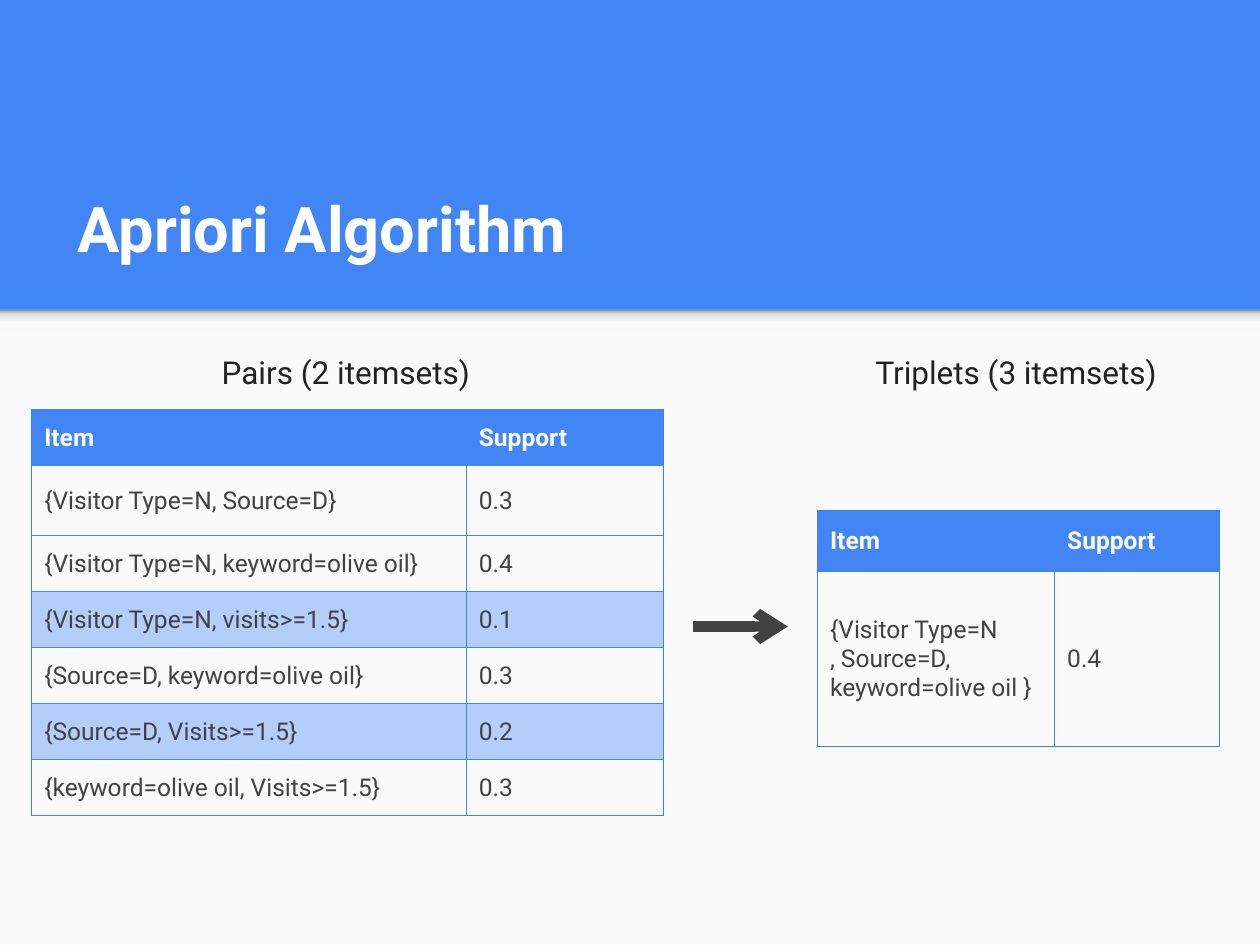
from dataclasses import dataclass

from lxml.etree import SubElement
from pptx import Presentation
from pptx.dml.color import RGBColor
from pptx.enum.shapes import MSO_CONNECTOR, MSO_SHAPE
from pptx.enum.text import MSO_ANCHOR as ANCHOR, MSO_AUTO_SIZE as AUTO_SIZE, PP_ALIGN as ALIGN
from pptx.oxml.ns import qn
from pptx.util import Cm, Pt

FONT = "Roboto"
BLUE, EDGE, PALE = "4285F4", "3C81F3", "B3CEFB"
WHITE, PAPER, GREY, BLACK = "FFFFFF", "FAFAFA", "424242", "212121"
SHADOW_STOPS = [(0, "F9F9F9"), (36, "F9F9F9"), (80, "DEDEDE"), (100, "999999")]


@dataclass
class Caption:
    text: str
    left: float
    width: float


@dataclass
class ItemTable:
    left: float
    top: float
    widths: list[float]
    heights: list[float]
    rows: list[tuple[str, str]]
    marked: tuple[int, ...] = ()


CAPTIONS = [Caption("Triplets (3 itemsets)", 17.4, 6.27),
            Caption("Pairs (2 itemsets)", 4.22, 5.54)]
TABLES = [
    ItemTable(0.64, 8.26, [8.76, 3.97], [1.13, 1.41] + [1.13] * 5, [
        ("{Visitor Type=N, Source=D}", "0.3"),
        ("{Visitor Type=N, keyword=olive oil}", "0.4"),
        ("{Visitor Type=N, visits>=1.5}", "0.1"),
        ("{Source=D, keyword=olive oil}", "0.3"),
        ("{Source=D, Visits>=1.5}", "0.2"),
        ("{keyword=olive oil, Visits>=1.5}", "0.3"),
    ], marked=(3, 5)),
    ItemTable(16.48, 10.3, [4.78, 3.33], [1.22, 3.53], [
        ("{Visitor Type=N\n, Source=D, keyword=olive oil }", "0.4"),
    ]),
]


def rgb(color: str) -> RGBColor:
    return RGBColor.from_string(color)


def write(tf, text: str, *, size: float, color: str, bold: bool = False) -> None:
    """Fill a text frame, one paragraph for each line of text."""
    for i, line in enumerate(text.split("\n")):
        p = tf.add_paragraph() if i else tf.paragraphs[0]
        p.alignment = ALIGN.LEFT
        r = p.add_run()
        r.text = line
        r.font.name, r.font.size, r.font.bold = FONT, Pt(size), bold
        r.font.color.rgb = rgb(color)


def add_band(slide, height: float):
    """Add a full-width rectangle that starts at the foot of the header."""
    sp = slide.shapes.add_shape(MSO_SHAPE.RECTANGLE, 0, Cm(6.25), Cm(25.4), Cm(height))
    sp.shadow.inherit = False
    sp.line.fill.background()
    return sp


def add_backdrop(slide) -> None:
    slide.background.fill.solid()
    slide.background.fill.fore_color.rgb = rgb(BLUE)
    panel = add_band(slide, 12.8)
    panel.fill.solid()
    panel.fill.fore_color.rgb = rgb(PAPER)

    fill = add_band(slide, 0.4).fill
    fill.gradient()
    fill.gradient_angle = 90
    stops = fill.gradient_stops
    stop_list = stops[0]._gs.getparent()
    for gs in list(stop_list):
        stop_list.remove(gs)
    for percent, color in SHADOW_STOPS:
        gs = SubElement(stop_list, qn("a:gs"), pos=str(percent * 1000))
        SubElement(gs, qn("a:srgbClr"), val=color)


def add_title(slide, text: str) -> None:
    sp = slide.shapes.title
    sp.left, sp.top, sp.width, sp.height = Cm(1.32), Cm(2.74), Cm(22.83), Cm(2.85)
    tf = sp.text_frame
    tf.auto_size = AUTO_SIZE.NONE
    tf.vertical_anchor = ANCHOR.BOTTOM
    tf.margin_left = tf.margin_right = tf.margin_top = tf.margin_bottom = Cm(0.25)
    write(tf, text, size=36, color=WHITE, bold=True)


def add_caption(slide, caption: Caption) -> None:
    sp = slide.shapes.add_textbox(Cm(caption.left), Cm(6.99), Cm(caption.width), Cm(1.03))
    sp.text_frame.word_wrap = False
    sp.text_frame.auto_size = AUTO_SIZE.SHAPE_TO_FIT_TEXT
    write(sp.text_frame, caption.text, size=18, color=BLACK)


def add_borders(cell, outer: dict[str, bool]) -> None:
    """Draw the four sides of a cell, thinner on the outside of the table."""
    for side, is_outer in outer.items():
        color, width = (EDGE, 0.75) if is_outer else (BLUE, 1)
        ln = SubElement(cell._tc.get_or_add_tcPr(), qn(f"a:ln{side}"), w=str(Pt(width)))
        SubElement(SubElement(ln, qn("a:solidFill")), qn("a:srgbClr"), val=color)


def add_item_table(slide, spec: ItemTable) -> None:
    rows = [("Item", "Support")] + spec.rows
    last_row, last_col = len(rows) - 1, len(spec.widths) - 1
    table = slide.shapes.add_table(
        len(rows), len(spec.widths), Cm(spec.left), Cm(spec.top),
        Cm(sum(spec.widths)), Cm(sum(spec.heights))).table
    table.first_row = table.horz_banding = False
    for col, width in zip(table.columns, spec.widths):
        col.width = Cm(width)
    for row, height in zip(table.rows, spec.heights):
        row.height = Cm(height)
    for i, values in enumerate(rows):
        fill = BLUE if i == 0 else PALE if i in spec.marked else None
        for j, text in enumerate(values):
            cell = table.cell(i, j)
            cell.vertical_anchor = ANCHOR.MIDDLE
            add_borders(cell, {"L": j == 0, "R": j == last_col,
                               "T": i == 0, "B": i == last_row})
            if fill:
                cell.fill.solid()
                cell.fill.fore_color.rgb = rgb(fill)
            else:
                cell.fill.background()
            write(cell.text_frame, text, size=14, color=GREY if i else WHITE, bold=i == 0)


def add_arrow(slide, left: float, right: float, y: float) -> None:
    cxn = slide.shapes.add_connector(MSO_CONNECTOR.STRAIGHT, Cm(left), Cm(y), Cm(right), Cm(y))
    cxn.line.color.rgb = rgb(GREY)
    cxn.line.width = Pt(5.75)
    SubElement(cxn.line._get_or_add_ln(), qn("a:tailEnd"), type="arrow")
    SubElement(cxn._element.spPr, qn("a:effectLst"))


def main() -> None:
    prs = Presentation()
    prs.slide_width, prs.slide_height = Cm(25.4), Cm(19.05)
    slide = prs.slides.add_slide(prs.slide_layouts[5])
    add_backdrop(slide)
    add_title(slide, "Apriori Algorithm")
    add_arrow(slide, 13.97, 15.88, 12.63)
    for spec in TABLES:
        add_item_table(slide, spec)
    for caption in CAPTIONS:
        add_caption(slide, caption)
    prs.save("out.pptx")


if __name__ == "__main__":
    main()
